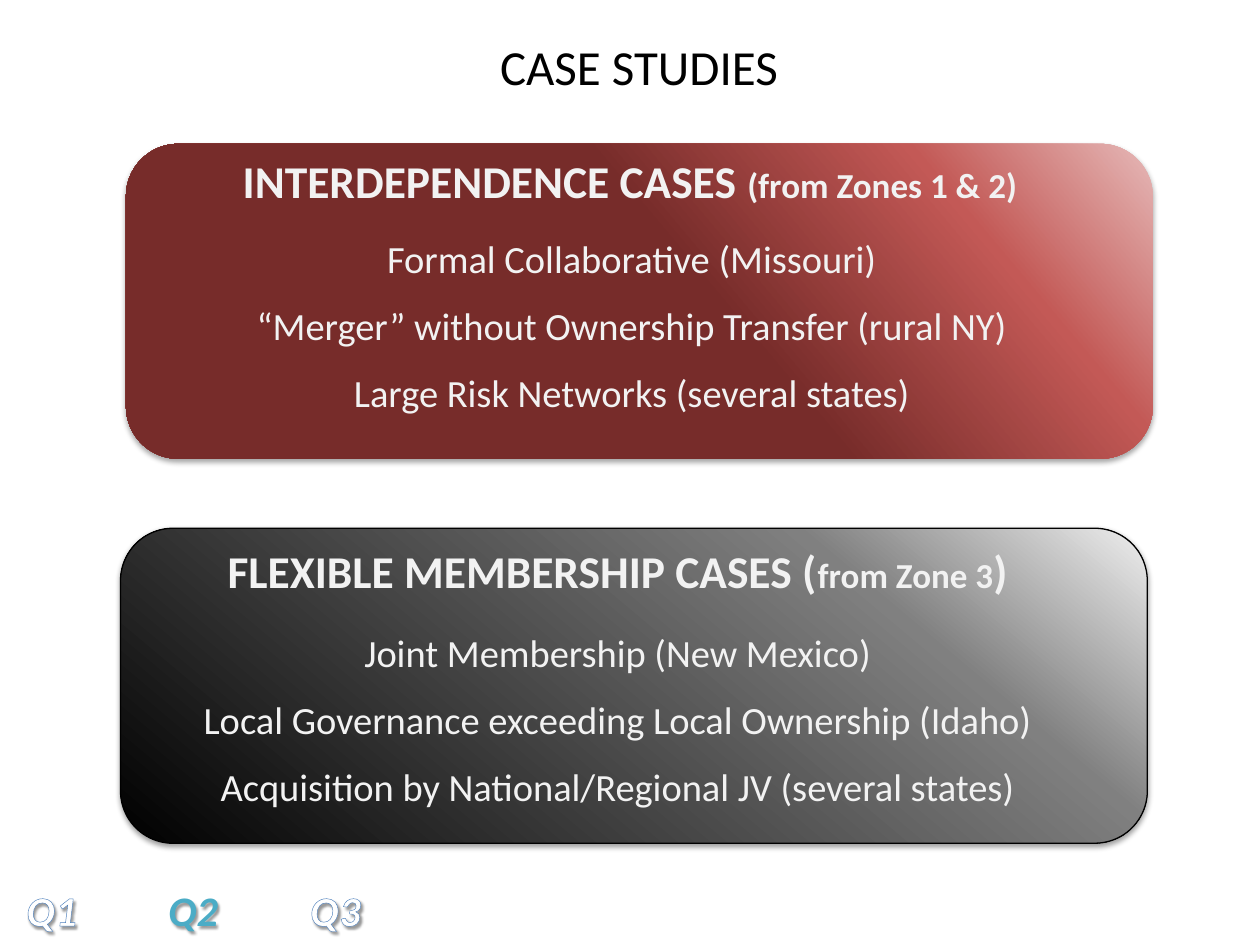
from copy import deepcopy
from dataclasses import dataclass

from lxml.etree import SubElement
from pptx import Presentation
from pptx.dml.color import RGBColor
from pptx.enum.shapes import MSO_SHAPE
from pptx.enum.text import MSO_ANCHOR, MSO_AUTO_SIZE, PP_ALIGN
from pptx.oxml.ns import qn
from pptx.util import Cm, Pt


@dataclass(frozen=True)
class Theme:
    font: str = "Calibri"
    black: str = "000000"
    light: str = "F2F2F2"
    white: str = "FFFFFF"
    blue: str = "4F81BD"
    teal: str = "4BACC6"
    red_stops: tuple = ((0, "E6B9B8"), (0.19, "C35956"), (0.44, "772C2A"))
    gray_stops: tuple = ((0, "000000"), (0.75, "808080"), (1, "EEEEEE"))
    title_size: int = 28
    heading_size: int = 26
    marker_size: int = 24
    item_size: int = 22
    note_size: int = 20


def apply_format(target, values):
    for name, value in values.items():
        setattr(target, name, value)


def add_color(parent, color, alpha=100):
    node = SubElement(parent, qn("a:srgbClr"), val=color)
    if alpha < 100:
        SubElement(node, qn("a:alpha"), val=str(alpha * 1000))


def add_shadow(shape, blur, distance, alpha, angle=90):
    shape.shadow.inherit = False
    effects = shape.element.spPr.find(qn("a:effectLst"))
    shadow = SubElement(effects, qn("a:outerShdw"), blurRad=str(Pt(blur)),
                        dist=str(Pt(distance)), dir=str(angle * 60000), rotWithShape="0")
    add_color(shadow, Theme.black, alpha)


class SlideBuilder:
    def __init__(self, slide, theme):
        self.slide = slide
        self.theme = theme

    def place(self, shape, box):
        names = ("left", "top", "width", "height")
        apply_format(shape, dict(zip(names, map(Cm, box))))

    def panel(self, box, stops, angle, shadow, line=None):
        shape = self.slide.shapes.add_shape(MSO_SHAPE.ROUNDED_RECTANGLE, *map(Cm, box))
        shape.fill.gradient()
        shape.fill.gradient_angle = angle
        stop_list = shape.element.spPr.find(".//" + qn("a:gsLst"))
        stop_list.append(deepcopy(stop_list[-1]))
        for stop, (position, color) in zip(shape.fill.gradient_stops, stops):
            stop.position = position
            stop.color.rgb = RGBColor.from_string(color)
        if line:
            shape.line.color.rgb = RGBColor.from_string(line)
            shape.line.width = Pt(0.75)
        else:
            shape.line.fill.background()
        add_shadow(shape, *shadow)

    def run(self, paragraph, text, size, color, **values):
        run = paragraph.add_run()
        run.text = text
        apply_format(run.font, {"name": self.theme.font, "size": Pt(size), "bold": False} | values)
        run.font.color.rgb = RGBColor.from_string(color)
        return run

    def paragraph(self, frame, runs, before=0):
        paragraph = frame.paragraphs[0]
        if paragraph.runs:
            paragraph = frame.add_paragraph()
        apply_format(paragraph, {"alignment": PP_ALIGN.CENTER, "space_before": Pt(before)})
        for text, size, color, bold in runs:
            self.run(paragraph, text, size, color, bold=bold)
        return paragraph

    def items(self, frame, texts, first_gap):
        for index, text in enumerate(texts):
            gap = 12 if index else first_gap
            run = (text, self.theme.item_size, self.theme.light, False)
            properties = self.paragraph(frame, [run], gap)._p.get_or_add_pPr()
            for name in ("marL", "indent"):
                properties.set(name, "0")
            SubElement(properties, qn("a:buNone"))

    def text_box(self, box):
        shape = self.slide.shapes.add_textbox(*map(Cm, box))
        shape.text_frame.word_wrap = True
        return shape

    def heading(self, box, parts):
        frame = self.text_box(box).text_frame
        self.paragraph(frame, [(text, size, self.theme.light, True) for text, size in parts])
        return frame

    def placeholder(self, index, box):
        shape = self.slide.placeholders[index]
        self.place(shape, box)
        shape.element.getparent().append(shape.element)
        apply_format(shape.text_frame, {"vertical_anchor": MSO_ANCHOR.MIDDLE,
                                        "auto_size": MSO_AUTO_SIZE.NONE})
        return shape.text_frame

    def title(self, text, box):
        run = (text, self.theme.title_size, self.theme.black, False)
        self.paragraph(self.placeholder(0, box), [run])

    def body(self, texts, box):
        self.items(self.placeholder(1, box), texts, 6)

    def markers(self, parts, box, tab_gap):
        shape = self.text_box(box)
        add_shadow(shape, 1, 1.5, 40, 45)
        paragraph = shape.text_frame.paragraphs[0]
        tabs = SubElement(paragraph._p.get_or_add_pPr(), qn("a:tabLst"))
        for step in range(1, 5):
            SubElement(tabs, qn("a:tab"), pos=str(Cm(tab_gap * step)), algn="l")
        for text, color, outline, spacing in parts:
            run = self.run(paragraph, text, self.theme.marker_size, color, bold=True, italic=True)
            properties = run.font._element
            properties.set("spc", str(spacing))
            line = SubElement(properties, qn("a:ln"), w=str(Pt(0.75)))
            add_color(SubElement(line, qn("a:solidFill")), outline)
            properties.insert(0, line)


def main():
    theme = Theme()
    presentation = Presentation()
    apply_format(presentation, {"slide_width": Cm(25.4), "slide_height": Cm(19.05)})
    slide = presentation.slides.add_slide(presentation.slide_layouts[1])
    builder = SlideBuilder(slide, theme)

    builder.panel((2.43, 10.65, 20.7, 6.35), theme.gray_stops, 50, (3.1, 1.6, 38), theme.black)
    builder.panel((2.54, 2.9, 20.7, 6.35), theme.red_stops, 220, (3.1, 1.8, 35))
    builder.heading((1.09, 2.97, 23.22, 1.37), [
        ("INTERDEPENDENCE CASES ", theme.heading_size),
        ("(from Zones 1 & 2)", theme.note_size),
    ])
    membership = builder.heading((0.84, 10.82, 23.22, 5.69), [
        ("FLEXIBLE MEMBERSHIP CASES (", theme.heading_size),
        ("from Zone 3", theme.note_size),
        (")", theme.heading_size),
    ])
    builder.items(membership, [
        "Joint Membership (New Mexico)",
        "Local Governance exceeding Local Ownership (Idaho)",
        "Acquisition by National/Regional JV (several states)",
    ], 18)
    builder.title("CASE STUDIES", (1.27, 0.61, 23.22, 1.45))
    builder.body([
        "Formal Collaborative (Missouri)",
        "“Merger” without Ownership Transfer (rural NY)",
        "Large Risk Networks (several states)",
    ], (2.08, 3.59, 21.31, 5.94))
    builder.markers([
        ("Q1\t\t", theme.white, theme.blue, 50),
        ("Q2", theme.teal, theme.white, 0),
        ("\t\tQ3", theme.white, theme.blue, 50),
    ], (0.28, 17.7, 16.41, 1.27), 1.43)

    presentation.save("out.pptx")


if __name__ == "__main__":
    main()
